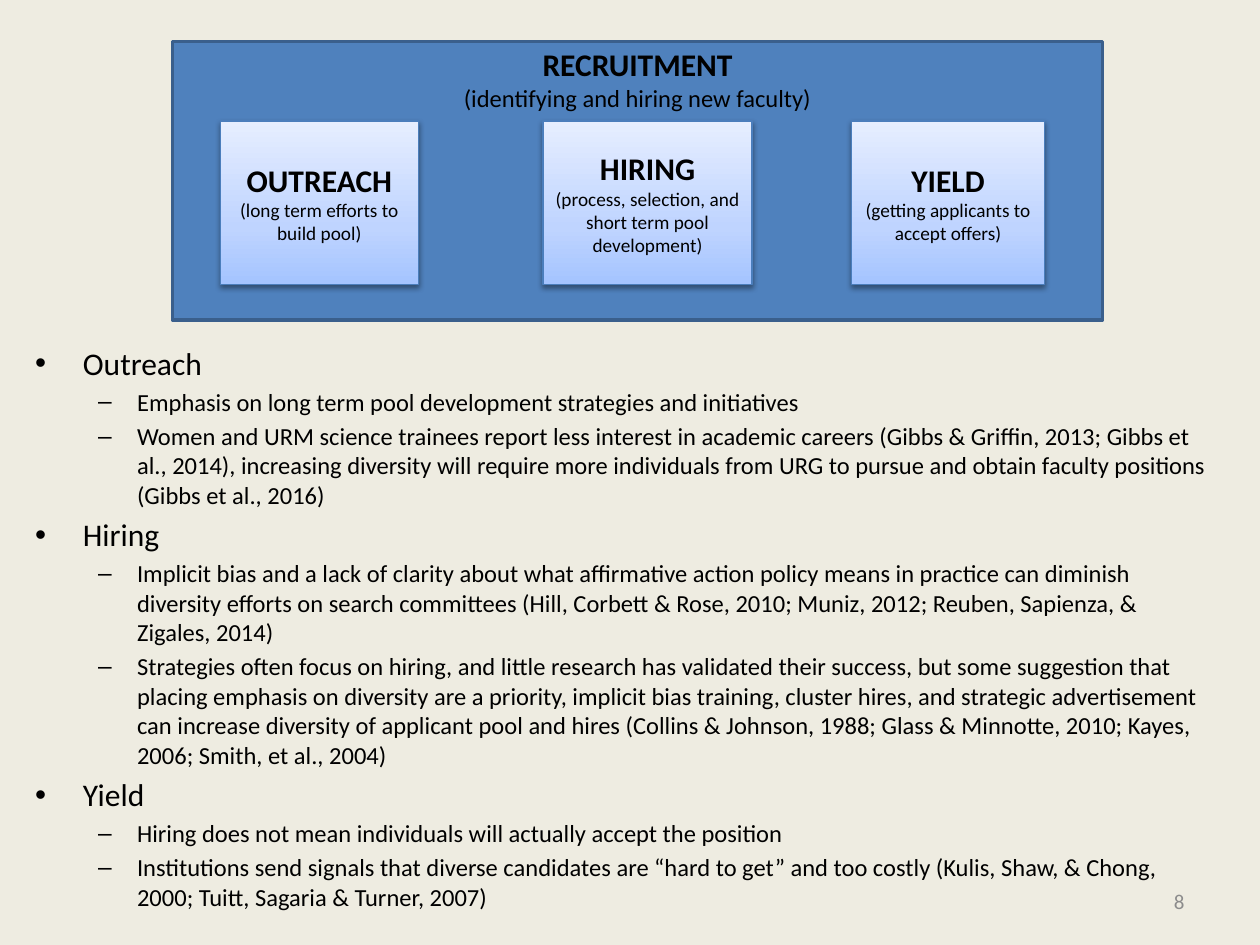
"""Builds a slide on the three parts of faculty recruitment."""
from lxml import etree
from pptx import Presentation
from pptx.dml.color import RGBColor
from pptx.enum.shapes import MSO_SHAPE
from pptx.enum.text import MSO_ANCHOR, PP_ALIGN
from pptx.oxml import parse_xml
from pptx.oxml.ns import nsdecls, qn
from pptx.util import Inches, Pt

RECTANGLE = MSO_SHAPE.RECTANGLE
TOP, MIDDLE = MSO_ANCHOR.TOP, MSO_ANCHOR.MIDDLE
LEFT, CENTER, RIGHT = PP_ALIGN.LEFT, PP_ALIGN.CENTER, PP_ALIGN.RIGHT

THEME = {
    "font": "Calibri",
    "background": "EEECE1", "text": "000000", "number": "8C8C8C",
    "panel": "4F81BD", "panel_line": "3A5F8C", "card_line": "4B7EBC",
    "card_stops": [(0, "A4C4FF"), (35, "BFD4FF"), (100, "E6EEFF")],
    "heading": 18, "body": 14, "page_number": 12, "detail": 11,
}


def add_paragraph(frame, text, size, color="text", bold=False, align=LEFT,
                  bullet=None, level=0, indent=0, hang=0, before=0):
    """Write text into the first empty paragraph, or a new one, of the frame."""
    para = frame.paragraphs[0]
    if para.runs:
        para = frame.add_paragraph()
    para.alignment = align
    para.level = level
    para.space_before = Pt(before)
    span = para.add_run()
    span.text = text
    span.font.name = THEME["font"]
    span.font.size = Pt(THEME[size])
    span.font.bold = bold
    span.font.color.rgb = RGBColor.from_string(THEME[color])
    if bullet:
        properties = para._p.get_or_add_pPr()
        properties.set("marL", str(Inches(indent)))
        properties.set("indent", str(-Inches(hang)))
        etree.SubElement(properties, qn("a:buFont")).set("typeface", "Arial")
        etree.SubElement(properties, qn("a:buChar")).set("char", bullet)


def add_box(slide, left, top, width, height, line, weight):
    """Add an outlined rectangle without shadow."""
    box = slide.shapes.add_shape(RECTANGLE, Inches(left), Inches(top),
                                 Inches(width), Inches(height))
    box.shadow.inherit = False
    box.line.color.rgb = RGBColor.from_string(THEME[line])
    box.line.width = Pt(weight)
    box.text_frame.word_wrap = True
    box.text_frame.vertical_anchor = MIDDLE
    return box


deck = Presentation()
deck.slide_width, deck.slide_height = Inches(10), Inches(7.5)
page = deck.slides.add_slide(deck.slide_layouts[6])
page.background.fill.solid()
page.background.fill.fore_color.rgb = RGBColor.from_string(THEME["background"])

panel = add_box(page, 1.37, 0.33, 7.38, 2.21, "panel_line", 2)
panel.fill.solid()
panel.fill.fore_color.rgb = RGBColor.from_string(THEME["panel"])
panel.text_frame.vertical_anchor = TOP
panel.text_frame.margin_top = Inches(0.03)
add_paragraph(panel.text_frame, "RECRUITMENT", "heading", bold=True, align=CENTER)
add_paragraph(panel.text_frame, "(identifying and hiring new faculty)", "body", align=CENTER)

stops = "".join(f'<a:gs pos="{position * 1000}"><a:srgbClr val="{color}"/></a:gs>'
                for position, color in THEME["card_stops"])
gradient = (f'<a:gradFill {nsdecls("a")} rotWithShape="1"><a:gsLst>{stops}</a:gsLst>'
            '<a:lin ang="16200000" scaled="0"/></a:gradFill>')
shadow = (f'<a:outerShdw {nsdecls("a")} blurRad="{Pt(3.1)}" dist="{Pt(1.6)}" dir="5400000" '
          'rotWithShape="0"><a:srgbClr val="000000"><a:alpha val="38000"/></a:srgbClr>'
          '</a:outerShdw>')

cards = [
    (1.75, 1.57, "OUTREACH", "(long term efforts to build pool)"),
    (4.31, 1.66, "HIRING", "(process, selection, and short term pool development)"),
    (6.76, 1.53, "YIELD", "(getting applicants to accept offers)"),
]
for left, width, title, detail in cards:
    card = add_box(page, left, 0.96, width, 1.3, "card_line", 0.75)
    properties = card._element.spPr
    properties.find(qn("a:prstGeom")).addnext(parse_xml(gradient))
    properties.find(qn("a:effectLst")).append(parse_xml(shadow))
    add_paragraph(card.text_frame, title, "heading", bold=True, align=CENTER)
    add_paragraph(card.text_frame, detail, "detail", align=CENTER)

topics = {
    "Outreach": [
        "Emphasis on long term pool development strategies and initiatives",
        "Women and URM science trainees report less interest in academic careers "
        "(Gibbs & Griffin, 2013; Gibbs et al., 2014), increasing diversity will require more "
        "individuals from URG to pursue and obtain faculty positions (Gibbs et al., 2016)",
    ],
    "Hiring": [
        "Implicit bias and a lack of clarity about what affirmative action policy means in "
        "practice can diminish diversity efforts on search committees (Hill, Corbett & Rose, "
        "2010; Muniz, 2012; Reuben, Sapienza, & Zigales, 2014)",
        "Strategies often focus on hiring, and little research has validated their success, "
        "but some suggestion that placing emphasis on diversity are a priority, implicit bias "
        "training, cluster hires, and strategic advertisement can increase diversity of "
        "applicant pool and hires (Collins & Johnson, 1988; Glass & Minnotte, 2010; Kayes, "
        "2006; Smith, et al., 2004)",
    ],
    "Yield": [
        "Hiring does not mean individuals will actually accept the position",
        "Institutions send signals that diverse candidates are “hard to get” and too costly "
        "(Kulis, Shaw, & Chong, 2000; Tuitt, Sagaria & Turner, 2007)",
    ],
}
body = page.shapes.add_textbox(Inches(0.18), Inches(2.68), Inches(9.53), Inches(4.56))
body.text_frame.word_wrap = True
for topic, points in topics.items():
    add_paragraph(body.text_frame, topic, "heading", bullet="•",
                  indent=0.38, hang=0.38, before=3.6)
    for point in points:
        add_paragraph(body.text_frame, point, "body", bullet="–", level=1,
                      indent=0.81, hang=0.31, before=2.8)

number = page.shapes.add_textbox(Inches(7.17), Inches(6.95), Inches(2.33), Inches(0.4))
number.text_frame.word_wrap = True
number.text_frame.vertical_anchor = MIDDLE
add_paragraph(number.text_frame, "8", "page_number", color="number", align=RIGHT)

deck.save("out.pptx")
